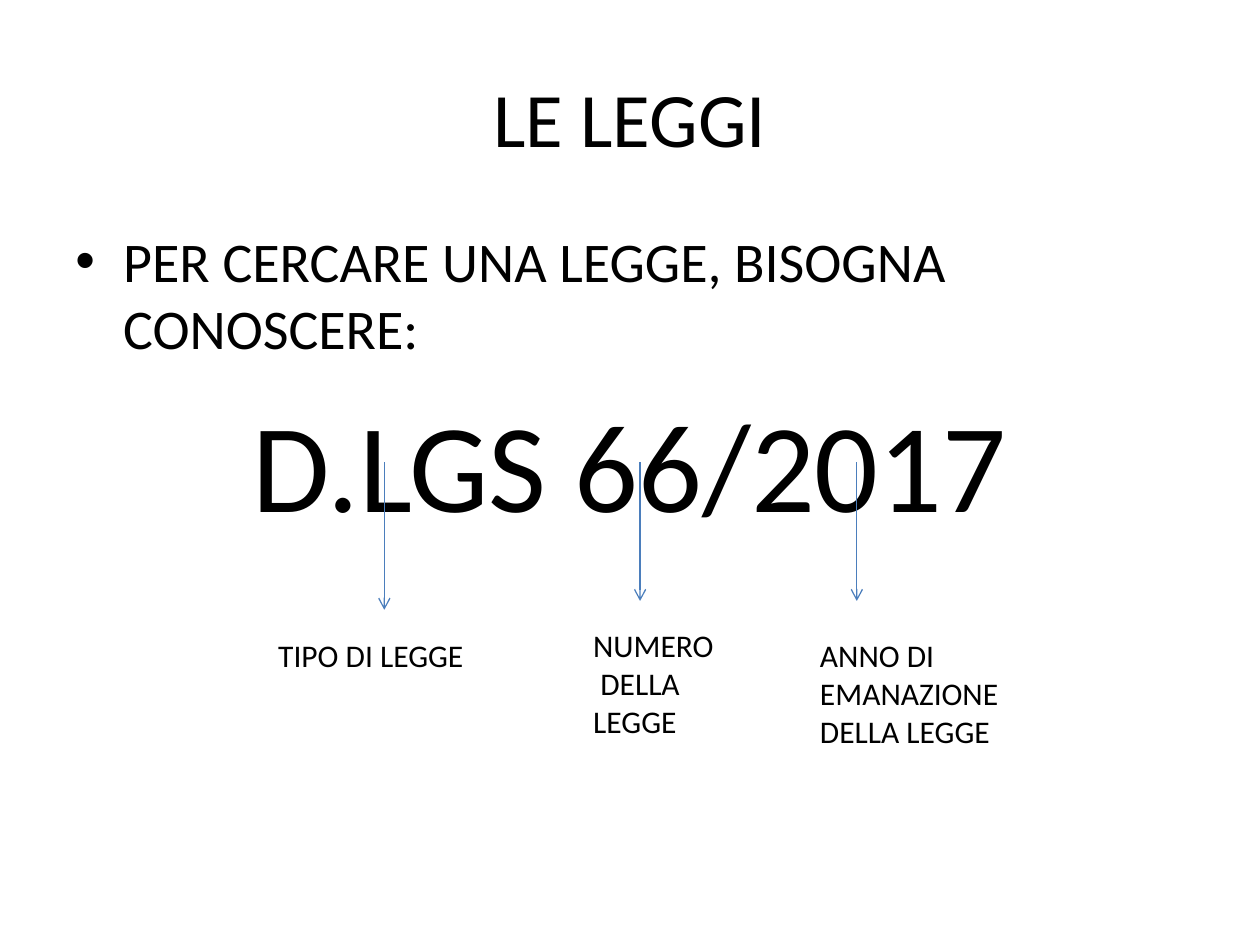
from lxml import etree
from pptx import Presentation
from pptx import util as u
from pptx.dml.color import RGBColor
from pptx.enum import shapes, text
from pptx.oxml.ns import qn

FONT = "Calibri"
BLACK = "000000"
ARROW_BLUE = "4B7EBC"
ARROW_TOP = 3.67

# arrow x, arrow end y, label box (left, top, width, height), label
PARTS = [
    (3.05, 4.84, (2.11, 5, 1.88, 0.4), "TIPO DI LEGGE"),
    (5.08, 4.77, (4.61, 4.92, 1.17, 1.01), "NUMERO\v DELLA LEGGE"),
    (6.8, 4.77, (6.41, 5, 1.8, 1.01), "ANNO DI EMANAZIONE DELLA LEGGE"),
]


def color(hex_code):
    return RGBColor.from_string(hex_code)


def add_frame(slide, box, anchor=text.MSO_ANCHOR.TOP):
    frame = slide.shapes.add_textbox(*map(u.Inches, box)).text_frame
    frame.word_wrap = True
    frame.vertical_anchor = anchor
    return frame


def write(paragraph, words, size, align=text.PP_ALIGN.LEFT):
    paragraph.text = words
    paragraph.alignment = align
    paragraph.font.name = FONT
    paragraph.font.size = u.Pt(size)
    paragraph.font.color.rgb = color(BLACK)


def hang(paragraph, bullet=None):
    """Give a hanging indent, with an optional bullet."""
    properties = paragraph._p.get_or_add_pPr()
    properties.set("marL", str(u.Inches(0.38)))
    properties.set("indent", str(u.Inches(-0.38)))
    paragraph.space_before = u.Pt(0.2 * paragraph.font.size.pt)
    if bullet:
        bullet_font = etree.Element(qn("a:buFont"), typeface="Arial")
        bullet_char = etree.Element(qn("a:buChar"), char=bullet)
        properties.find(qn("a:defRPr")).addprevious(bullet_font)
        bullet_font.addnext(bullet_char)


def add_arrow(slide, x, end_y):
    arrow = slide.shapes.add_connector(
        shapes.MSO_CONNECTOR.STRAIGHT,
        u.Inches(x), u.Inches(ARROW_TOP), u.Inches(x), u.Inches(end_y))
    arrow.line.color.rgb = color(ARROW_BLUE)
    arrow.line.width = u.Pt(0.75)
    etree.SubElement(arrow.line._get_or_add_ln(), qn("a:tailEnd"), type="arrow")
    etree.SubElement(arrow._element.spPr, qn("a:effectLst"))


def add_label(slide, box, words):
    frame = add_frame(slide, box)
    frame.auto_size = text.MSO_AUTO_SIZE.SHAPE_TO_FIT_TEXT
    write(frame.paragraphs[0], words, 18)


def main():
    deck = Presentation()
    deck.slide_width, deck.slide_height = u.Inches(10), u.Inches(7.5)
    slide = deck.slides.add_slide(deck.slide_layouts[6])

    title = add_frame(slide, (0.5, 0.3, 9, 1.25), text.MSO_ANCHOR.MIDDLE)
    write(title.paragraphs[0], "LE LEGGI", 44, text.PP_ALIGN.CENTER)

    body = add_frame(slide, (0.5, 1.75, 9, 4.95))
    intro, law = body.paragraphs[0], body.add_paragraph()
    write(intro, "PER CERCARE UNA LEGGE, BISOGNA CONOSCERE:", 32)
    hang(intro, "•")
    write(law, "D.LGS 66/2017", 72, text.PP_ALIGN.CENTER)
    hang(law)

    for x, end_y, box, words in PARTS:
        add_arrow(slide, x, end_y)
        add_label(slide, box, words)

    deck.save("out.pptx")


if __name__ == "__main__":
    main()
